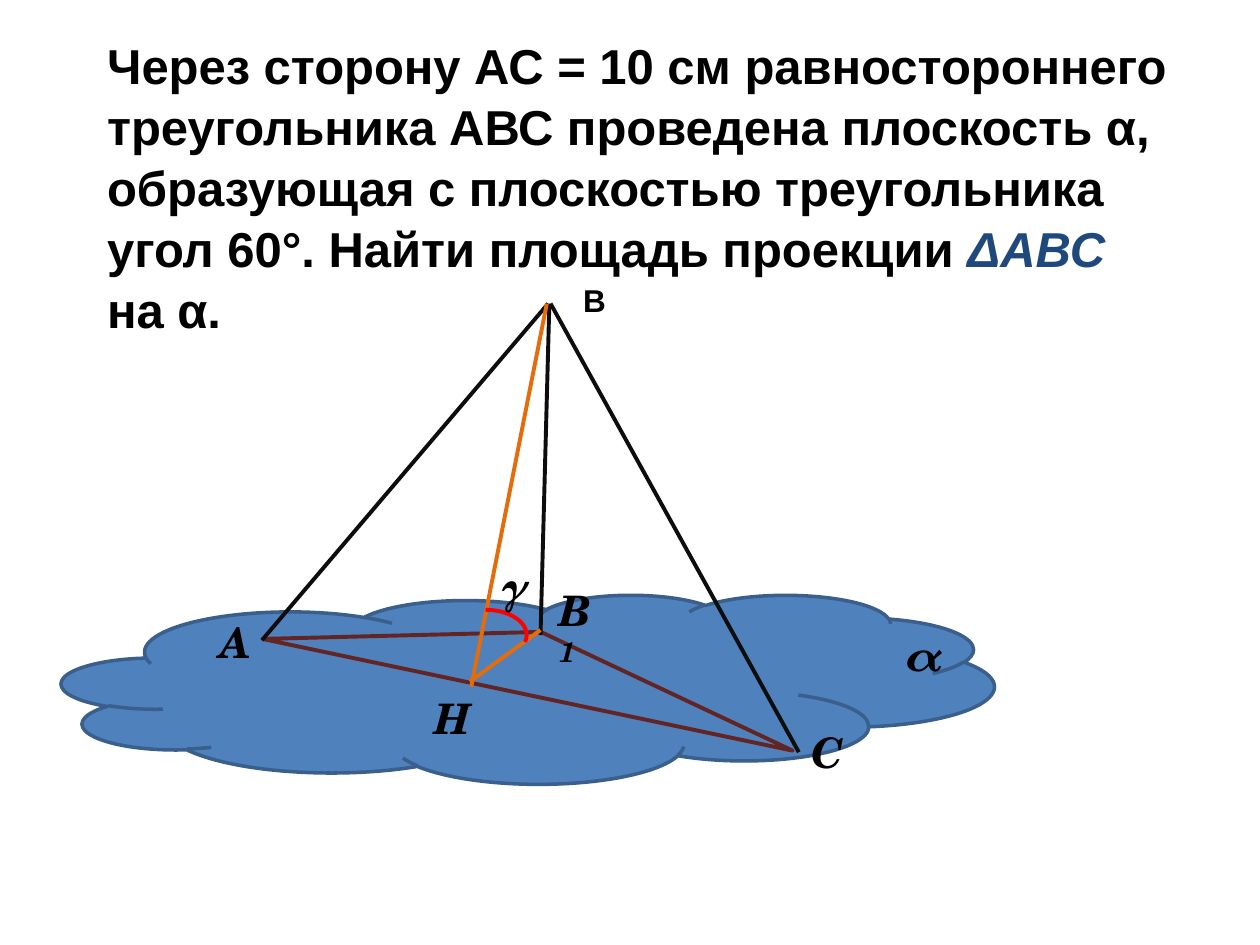
from dataclasses import dataclass
from typing import NamedTuple

from lxml import etree
from pptx import Presentation
from pptx import util as u
from pptx.dml.color import RGBColor
from pptx.enum import shapes, text
from pptx.oxml import ns

COLUMNS, ROWS = 10, 7.5
CELL = u.Inches(1)


@dataclass(frozen=True)
class Theme:
    ink: str = "000000"
    accent: str = "1F497D"
    plane: str = "4F81BD"
    plane_edge: str = "3A5F8C"
    side: str = "0D0D0D"
    projection: str = "632523"
    height: str = "E46C0A"
    angle: str = "FF0000"
    body_font: str = "Arial"
    label_font: str = "TeX Gyre Schola"
    problem_size: float = 28
    label_size: float = 24
    apex_size: float = 18
    index_size: float = 16
    edge_width: float = 2.25
    outline_width: float = 2


class Point(NamedTuple):
    col: float
    row: float


class Box(NamedTuple):
    col: float
    row: float
    cols: float
    rows: float


class Span(NamedTuple):
    words: str
    color: str
    size: float
    italic: bool = False


class Segment(NamedTuple):
    start: Point
    end: Point
    color: str


class Label(NamedTuple):
    box: Box
    spans: list[Span]
    font: str
    wrap: bool = False
    before: float = 0


THEME = Theme()


def cells(*counts: float) -> list[int]:
    """Turn grid counts into slide lengths."""
    return [u.Emu(round(count * CELL)) for count in counts]


def rgb(color: str) -> RGBColor:
    """Return the colour object of a hex value."""
    return RGBColor.from_string(color)


def write(frame, lines: list[list[Span]], *, font: str, wrap: bool = True,
          before: float = 0, spacing: float = 1) -> None:
    """Fill a text frame with bold, left-aligned lines of formatted spans."""
    frame.word_wrap = wrap
    frame.vertical_anchor = text.MSO_ANCHOR.TOP
    frame.auto_size = text.MSO_AUTO_SIZE.SHAPE_TO_FIT_TEXT
    for index, spans in enumerate(lines):
        paragraph = frame.add_paragraph() if index else frame.paragraphs[0]
        paragraph.alignment = text.PP_ALIGN.LEFT
        paragraph.space_before = u.Pt(before)
        paragraph.line_spacing = spacing
        for span in spans:
            run = paragraph.add_run()
            run.text = span.words
            run.font.name = font
            run.font.size = u.Pt(span.size)
            run.font.bold = True
            run.font.italic = span.italic
            run.font.color.rgb = rgb(span.color)


def draw_figure(slide, kind, box: Box, line: str, width: float,
                fill: str | None = None, rotation: float = 0):
    """Draw a preset outline, filled when a fill colour is given."""
    figure = slide.shapes.add_shape(kind, *cells(*box))
    figure.shadow.inherit = False
    figure.rotation = rotation
    figure.line.color.rgb = rgb(line)
    figure.line.width = u.Pt(width)
    if fill:
        figure.fill.solid()
        figure.fill.fore_color.rgb = rgb(fill)
    else:
        figure.fill.background()
    return figure


def draw_segment(slide, segment: Segment) -> None:
    """Draw a straight edge between two points."""
    edge = slide.shapes.add_connector(
        shapes.MSO_CONNECTOR.STRAIGHT, *cells(*segment.start, *segment.end))
    edge.line.color.rgb = rgb(segment.color)
    edge.line.width = u.Pt(THEME.edge_width)
    etree.SubElement(edge._element.spPr, ns.qn("a:effectLst"))


def draw_label(slide, label: Label) -> None:
    """Place the name of a point, angle or plane."""
    frame = slide.shapes.add_textbox(*cells(*label.box)).text_frame
    write(frame, [label.spans], font=label.font, wrap=label.wrap, before=label.before)


def letter(name: str, size: float = THEME.label_size) -> Span:
    """Return an italic letter of the drawing."""
    return Span(name, THEME.ink, size, True)


def statement(words: str) -> Span:
    """Return plain words of the problem."""
    return Span(words, THEME.ink, THEME.problem_size)


PROBLEM = [
    [statement("Через сторону АС = 10 см равностороннего")],
    [statement("треугольника АВС проведена плоскость α,")],
    [statement("образующая с плоскостью треугольника")],
    [statement("угол 60°. Найти площадь проекции "),
     Span("ΔАВС", THEME.accent, THEME.problem_size, True)],
    [statement("на α.")],
]
SIDES = [
    Segment(Point(2.08, 5.08), Point(4.35, 2.41), THEME.side),
    Segment(Point(4.37, 2.41), Point(6.34, 5.97), THEME.side),
    Segment(Point(4.36, 2.41), Point(4.29, 5.04), THEME.side),
]
HEIGHTS = [
    Segment(Point(4.34, 2.41), Point(3.74, 5.45), THEME.height),
    Segment(Point(4.29, 5), Point(3.73, 5.41), THEME.height),
]
LABELS = [
    Label(Box(1.64, 4.84, 0.46, 0.51), [letter("А")], THEME.label_font),
    Label(Box(6.34, 5.72, 0.44, 0.51), [letter("С")], THEME.label_font),
    Label(Box(4.34, 4.59, 0.57, 0.51), [letter("В"), letter("1", THEME.index_size)],
          THEME.label_font, wrap=True),
    Label(Box(7.07, 4.95, 0.41, 0.5), [letter("α")], THEME.label_font),
    Label(Box(3.35, 5.45, 0.51, 0.51), [letter("Н")], THEME.label_font),
    Label(Box(3.85, 4.4, 0.34, 0.51), [letter("γ")], THEME.label_font),
    Label(Box(4.53, 2.18, 0.39, 0.43), [Span("В", THEME.ink, THEME.apex_size)],
          THEME.body_font, wrap=True, before=THEME.apex_size / 2),
]


def main() -> None:
    """Build the geometry problem slide."""
    deck = Presentation()
    deck.slide_width, deck.slide_height = cells(COLUMNS, ROWS)
    slide = deck.slides.add_slide(deck.slide_layouts.get_by_name("Title Only"))
    problem = slide.shapes.title
    problem.left, problem.top, problem.width, problem.height = cells(0.75, 0.21, 11.1, 2.44)
    write(problem.text_frame, PROBLEM, font=THEME.body_font, spacing=1.04)

    preset = shapes.MSO_SHAPE
    draw_figure(slide, preset.CLOUD, Box(0.49, 4.72, 7.4, 1.5), THEME.plane_edge,
                THEME.outline_width, fill=THEME.plane)
    draw_figure(slide, preset.ISOSCELES_TRIANGLE, Box(2.09, 5.01, 4.3, 0.51),
                THEME.projection, THEME.edge_width, fill=THEME.plane, rotation=11.9)
    for segment in SIDES + HEIGHTS:
        draw_segment(slide, segment)
    angle = draw_figure(slide, preset.ARC, Box(3.53, 4.84, 0.65, 0.4),
                        THEME.angle, THEME.edge_width)
    angle.adjustments[0], angle.adjustments[1] = 162, 6
    for label in LABELS:
        draw_label(slide, label)
    deck.save("out.pptx")


if __name__ == "__main__":
    main()
